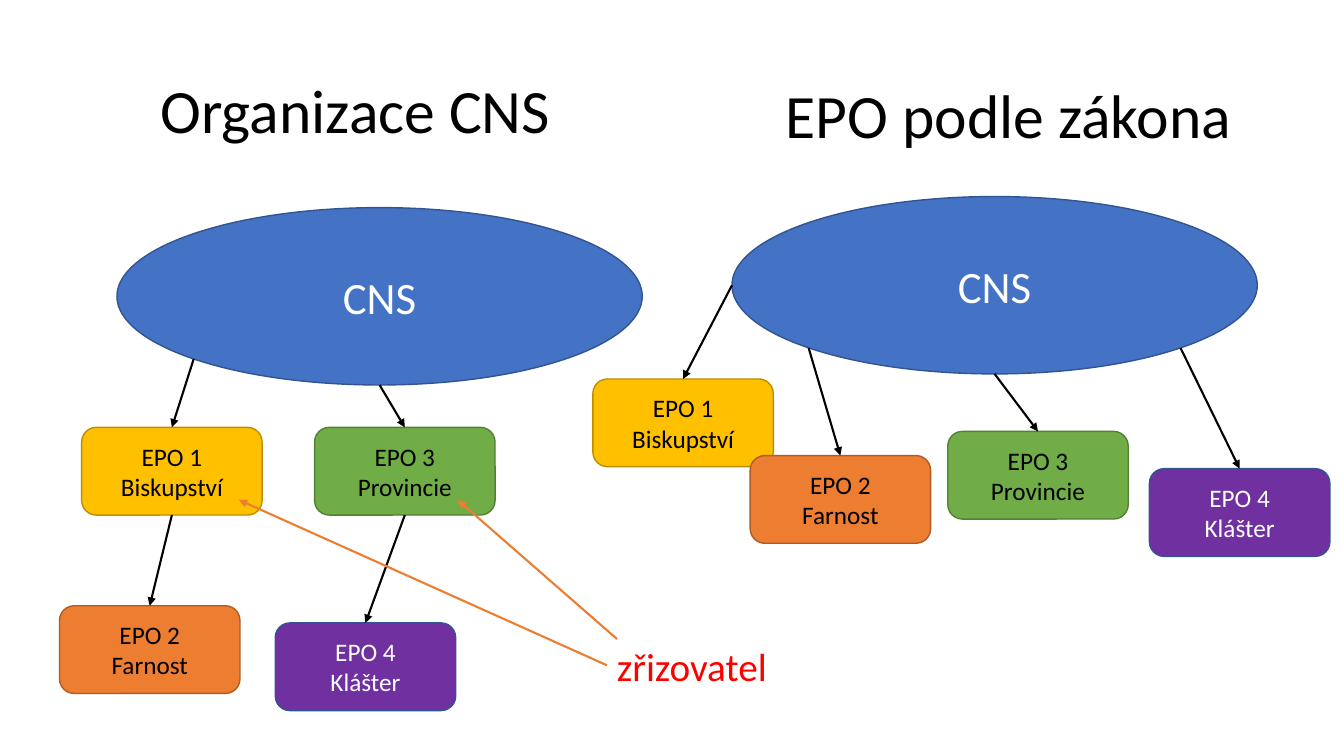
from lxml import etree
from pptx import Presentation
from pptx.dml.color import RGBColor
from pptx.enum.shapes import MSO_CONNECTOR, MSO_SHAPE
from pptx.enum.text import MSO_ANCHOR, PP_ALIGN
from pptx.oxml.ns import qn
from pptx.util import Inches, Pt

OVAL, ROUND = MSO_SHAPE.OVAL, MSO_SHAPE.ROUNDED_RECTANGLE
STRAIGHT = MSO_CONNECTOR.STRAIGHT
MIDDLE, TOP = MSO_ANCHOR.MIDDLE, MSO_ANCHOR.TOP
CENTER, LEFT = PP_ALIGN.CENTER, PP_ALIGN.LEFT

# Content
TITLES = [("Organizace CNS", 0.92, 0.4), ("EPO podle zákona", 7.4, 0.45)]
# text, fill, line, font colour
UNITS = {
    1: ("EPO 1 Biskupství", "FFC000", "BD8E00", "000000"),
    2: ("EPO 2\nFarnost", "ED7D31", "AF5C24", "000000"),
    3: ("EPO 3\nProvincie", "70AD47", "538035", "000000"),
    4: ("EPO 4\nKlášter", "7030A0", "325491", "FFFFFF"),
}
CHURCH = ("CNS", "4472C4", "325491", "FFFFFF")
# place of the ellipse, then unit, left, top, parent (0 = CNS), side of parent
TREES = [
    ((1.16, 2.06), [(1, 0.81, 4.24, 0, "lower left"), (2, 0.59, 6.01, 1, "bottom"),
                    (3, 3.12, 4.24, 0, "bottom"), (4, 2.73, 6.18, 3, "bottom")]),
    ((7.26, 1.95), [(1, 5.88, 3.76, 0, "left"), (2, 7.44, 4.52, 0, "lower left"),
                    (3, 9.4, 4.28, 0, "bottom"), (4, 11.4, 4.65, 0, "lower right")]),
]
FOUNDER = ("zřizovatel", 6.02, 6.32)
LINKS = [((6.12, 6.34), (4.54, 4.96)), ((6.02, 6.6), (2.37, 4.96))]

WIDE, HIGH = 5.21, 1.76
BOX_W, BOX_H = 1.79, 0.87
# Sides as shares of width and height; the lower ones lie at 45 degrees
SIDES = {"left": (0, 0.5), "bottom": (0.5, 1),
         "lower left": (0.146, 0.854), "lower right": (0.854, 0.854)}

deck = Presentation()
deck.slide_width, deck.slide_height = Inches(13.33), Inches(7.5)
slide = deck.slides.add_slide(deck.slide_layouts[6])
shapes = slide.shapes


def color(code):
    return RGBColor.from_string(code)


def write(shape, text, size, code, align=CENTER, anchor=MIDDLE, space=1):
    frame = shape.text_frame
    frame.word_wrap = True
    frame.vertical_anchor = anchor
    frame.text = text
    for para in frame.paragraphs:
        para.alignment, para.line_spacing = align, space
        for run in para.runs:
            run.font.name, run.font.size = "Calibri", Pt(size)
            run.font.color.rgb = color(code)


def label(place, text, size, code, **style):
    write(shapes.add_textbox(*map(Inches, place)), text, size, code, **style)


def node(kind, place, look, size):
    text, fill, edge, ink = look
    shape = shapes.add_shape(kind, *map(Inches, place))
    shape.shadow.inherit = False
    shape.fill.solid()
    shape.fill.fore_color.rgb = color(fill)
    shape.line.color.rgb = color(edge)
    shape.line.width = Pt(1)
    write(shape, text, size, ink)


def arrow(start, end, code):
    line = shapes.add_connector(STRAIGHT, *map(Inches, start + end))
    line.line.color.rgb = color(code)
    line.line.width = Pt(1.5)
    etree.SubElement(line.line._get_or_add_ln(), qn("a:tailEnd"), type="triangle")
    etree.SubElement(line._element.spPr, qn("a:effectLst"))


# Titles
for text, x, y in TITLES:
    label((x, y, WIDE, 1.45), text, 44, "000000", space=0.9)

# Trees: each unit is followed by the arrow from its parent
for spot, units in TREES:
    places = {0: spot + (WIDE, HIGH)}
    node(OVAL, places[0], CHURCH, 32)
    for unit, x, y, parent, side in units:
        places[unit] = (x, y, BOX_W, BOX_H)
        node(ROUND, places[unit], UNITS[unit], 18)
        px, py, pw, ph = places[parent]
        across, down = SIDES[side]
        arrow((px + across * pw, py + down * ph), (x + BOX_W / 2, y), "000000")

# Founder and its links
text, x, y = FOUNDER
label((x, y, 3.21, 0.57), text, 28, "FF0000", align=LEFT, anchor=TOP)
for start, end in LINKS:
    arrow(start, end, "ED7D31")

deck.save("out.pptx")
